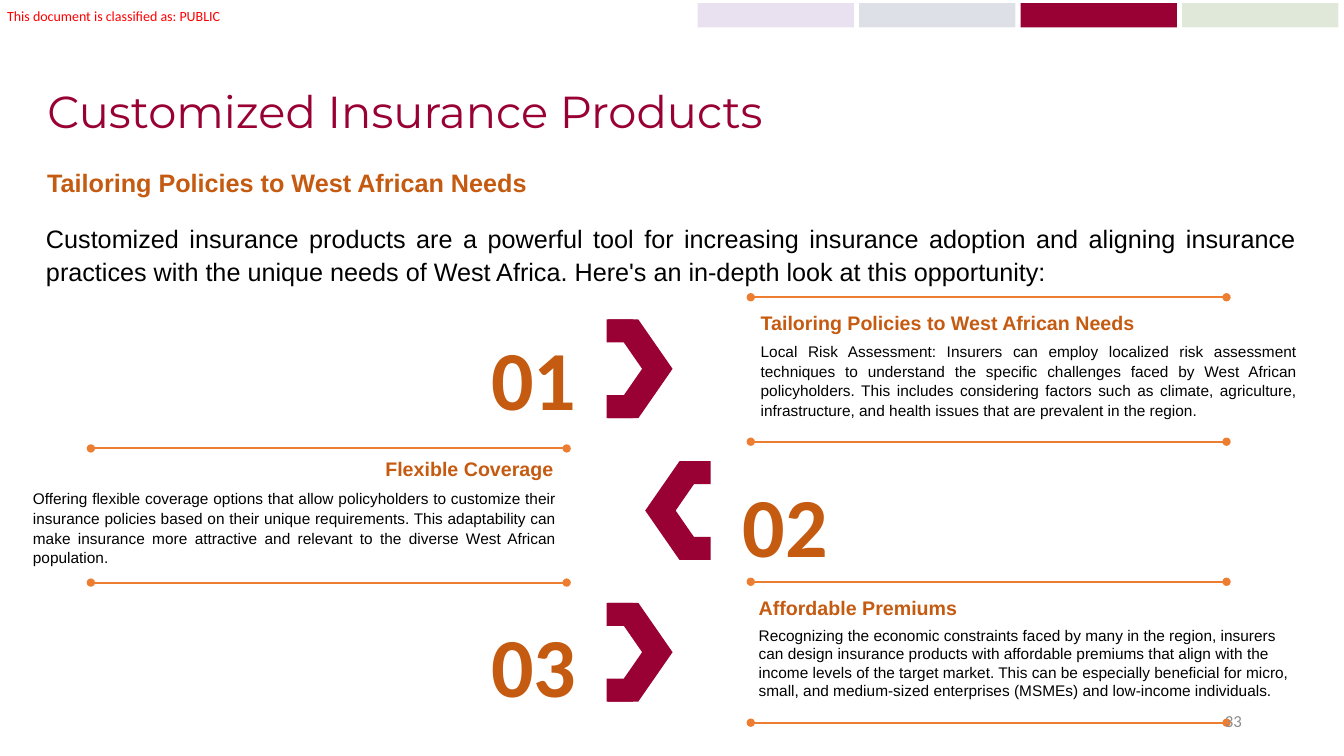
from lxml.etree import SubElement
from pptx import Presentation
from pptx.dml.color import RGBColor
from pptx.enum.shapes import MSO_CONNECTOR, MSO_SHAPE
from pptx.enum.text import MSO_ANCHOR, PP_ALIGN
from pptx.oxml.ns import qn
from pptx.util import Cm, Pt

COLORS = {
    "wine": "990033",
    "rust": "C55A11",
    "orange": "ED7D31",
    "black": "000000",
    "red": "FF0000",
    "gray": "8C8C8C",
    "navy": "203864",
    "green": "336600",
    "purple": "7030A0",
}
LEFT, RIGHT, CENTER, FULL = PP_ALIGN.LEFT, PP_ALIGN.RIGHT, PP_ALIGN.CENTER, PP_ALIGN.JUSTIFY

deck = Presentation()
deck.slide_width, deck.slide_height = Cm(33.87), Cm(19.05)
slide = deck.slides.add_slide(deck.slide_layouts[5])
shapes = slide.shapes


def write(place, words, size, color, font="Arial", bold=False, align=LEFT, space=1, after=0, box=None):
    box = box or shapes.add_textbox(0, 0, 0, 0)
    box.left, box.top, box.width, box.height = [Cm(n) for n in place]
    frame = box.text_frame
    frame.word_wrap = True
    para = frame.paragraphs[0]
    para.alignment, para.line_spacing, para.space_after = align, space, Pt(after)
    run = para.add_run()
    run.text = words
    run.font.name, run.font.size, run.font.bold = font, Pt(size), bold
    run.font.color.rgb = RGBColor.from_string(COLORS[color])
    return frame


def block(home, kind, place, color):
    shape = home.add_shape(kind, *[Cm(n) for n in place])
    shape.shadow.inherit = False
    shape.fill.solid()
    shape.fill.fore_color.rgb = RGBColor.from_string(COLORS[color])
    shape.line.fill.background()
    return shape


label = write((0.18, 0.18, 5.6, 0.43), "This document is classified as: PUBLIC", 10, "red", "Calibri")
label.margin_left = label.margin_right = label.margin_top = label.margin_bottom = 0

title = write((0.94, 1.02, 32, 3.68), "Customized Insurance Products", 32, "wine", "Montserrat",
              space=0.9, box=shapes.title)
title.vertical_anchor = MSO_ANCHOR.MIDDLE

write((0.94, 4.04, 16.97, 1.02), "Tailoring Policies to West African Needs", 18, "rust",
      bold=True, align=FULL, space=1.07, after=8)
write((0.91, 5.46, 32, 1.85),
      "Customized insurance products are a powerful tool for increasing insurance adoption and "
      "aligning insurance practices with the unique needs of West Africa. Here's an in-depth look "
      "at this opportunity:", 18, "black", align=FULL, space=1.07, after=8)

points = [
    {
        "head": "Tailoring Policies to West African Needs",
        "body": "Local Risk Assessment: Insurers can employ localized risk assessment techniques to "
                "understand the specific challenges faced by West African policyholders. This includes "
                "considering factors such as climate, agriculture, infrastructure, and health issues "
                "that are prevalent in the region.",
        "number at": (12.01, 8.1), "head at": (18.92, 7.7, 13.92, 0.86),
        "body at": (18.92, 8.46, 14.02, 2.24), "rules": (7.49, 11.13),
        "align": (LEFT, FULL), "space": (1.07, 8),
    },
    {
        "head": "Flexible Coverage",
        "body": "Offering flexible coverage options that allow policyholders to customize their "
                "insurance policies based on their unique requirements. This adaptability can make "
                "insurance more attractive and relevant to the diverse West African population.",
        "number at": (18.34, 11.81), "head at": (2.67, 11.38, 11.53, 0.86),
        "body at": (0.58, 12.17, 13.69, 2.24), "rules": (11.3, 14.68),
        "align": (RIGHT, FULL), "space": (1.07, 8),
    },
    {
        "head": "Affordable Premiums",
        "body": "Recognizing the economic constraints faced by many in the region, insurers can design "
                "insurance products with affordable premiums that align with the income levels of the "
                "target market. This can be especially beneficial for micro, small, and medium-sized "
                "enterprises (MSMEs) and low-income individuals.",
        "number at": (12.01, 15.34), "head at": (18.87, 14.88, 11.66, 0.86),
        "body at": (18.87, 15.65, 13.97, 2.13), "rules": (14.66, 18.21),
        "align": (LEFT, LEFT), "space": (1, 0),
    },
]

for i, point in enumerate(points):
    back = i % 2 == 1
    top = 8.05 + 3.57 * i
    tip, tab, start = (16.26, 17.25, 2.29) if back else (15.32, 15.29, 18.92)

    arrow = shapes.add_group_shape().shapes
    head = block(arrow, MSO_SHAPE.CHEVRON, (tip, top, 1.63, 2.49), "wine")
    head.adjustments[0] = 0.53
    head.rotation = 180 if back else 0
    for drop in (0, 1.91):
        block(arrow, MSO_SHAPE.RECTANGLE, (tab, top + drop, 0.66, 0.58), "wine")

    write((*point["number at"], 2.9, 2.82), f"{i + 1:02}", 60, "rust", "Calibri", True, CENTER)
    write(point["head at"], point["head"], 14, "rust", bold=True, align=point["align"][0])
    write(point["body at"], point["body"], 11, "black", align=point["align"][1],
          space=point["space"][0], after=point["space"][1])

    for y in point["rules"]:
        rule = shapes.add_connector(MSO_CONNECTOR.STRAIGHT, Cm(start), Cm(y), Cm(start + 11.99), Cm(y))
        rule.line.color.rgb = RGBColor.from_string(COLORS["orange"])
        rule.line.width = Pt(1.5)
        props = rule._element.spPr
        for end in ("a:headEnd", "a:tailEnd"):
            SubElement(props.find(qn("a:ln")), qn(end), type="oval")
        SubElement(props, qn("a:effectLst"))

page = write((23.93, 17.65, 7.62, 1.02), "33", 12, "gray", "Calibri", align=RIGHT)
page.vertical_anchor = MSO_ANCHOR.MIDDLE

for i, color in enumerate(["purple", "navy", "wine", "green"]):
    bar = block(shapes, MSO_SHAPE.RECTANGLE, (17.58 + 4.07 * i, 0.08, 3.94, 0.61), color)
    if color != "wine":
        tint = bar._element.spPr.find(qn("a:solidFill"))[0]
        SubElement(tint, qn("a:alpha"), val="15000")

deck.save("out.pptx")
